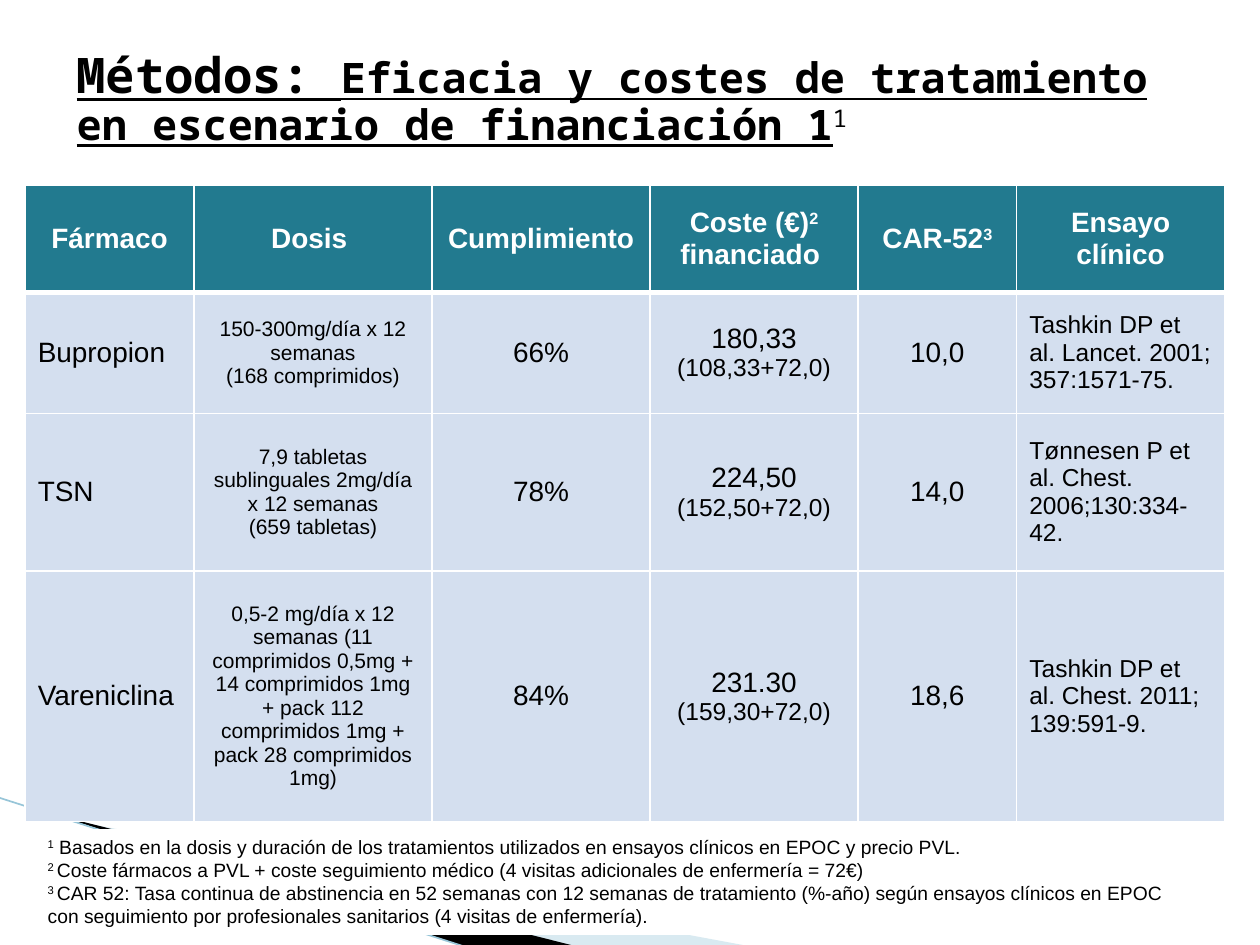
from lxml import etree
from pptx import Presentation
from pptx.dml.color import RGBColor
from pptx.enum.shapes import MSO_CONNECTOR, MSO_SHAPE
from pptx.enum.text import MSO_ANCHOR, PP_ALIGN
from pptx.oxml import parse_xml
from pptx.oxml.ns import nsdecls, qn
from pptx.util import Inches, Pt

BLACK, WHITE, TEAL, PALE = "000000", "FFFFFF", "227A8F", "D4DFEF"
COLUMN_WIDTHS = [1.34, 1.89, 1.73, 1.65, 1.26, 1.65]
ROW_HEIGHTS = [0.85, 0.96, 1.25, 1.99]
LEFT_COLUMNS, TIGHT_COLUMNS = (0, 5), (2, 3)
BODY_SIZES = [16, 12, 16, 16, 16, 14]

# Text between carets is superscript.
HEADERS = ["Fármaco", "Dosis ", "Cumplimiento ", "Coste (€)^2^ financiado ",
           "CAR-52^3^", "Ensayo clínico"]
# Each cost is a total and its breakdown.
TREATMENTS = [
    ["Bupropion", "150-300mg/día x 12 semanas\n(168 comprimidos)", "66%",
     ("180,33 ", "(108,33+72,0)"), "10,0",
     "Tashkin DP et al. Lancet. 2001; 357:1571-75."],
    ["TSN", "7,9 tabletas sublinguales 2mg/día x 12 semanas\n(659 tabletas)", "78%",
     ("224,50 ", "(152,50+72,0)"), "14,0",
     "Tønnesen P et al. Chest. 2006;130:334-42."],
    ["Vareniclina", "0,5-2 mg/día x 12 semanas (11 comprimidos 0,5mg + 14 comprimidos 1mg "
     "+ pack 112 comprimidos 1mg + pack 28 comprimidos 1mg)", "84%",
     ("231.30 ", "(159,30+72,0)"), "18,6",
     "Tashkin DP et al. Chest. 2011; 139:591-9."],
]
FOOTNOTES = (
    "^1^ Basados en la dosis y duración de los tratamientos utilizados en ensayos clínicos "
    "en EPOC y precio PVL.\n"
    "^2 ^Coste fármacos a PVL + coste seguimiento médico (4 visitas adicionales de "
    "enfermería = 72€)\n"
    "^3 ^CAR 52: Tasa continua de abstinencia en 52 semanas con 12 semanas de tratamiento "
    "(%-año) según ensayos clínicos en EPOC con seguimiento por profesionales sanitarios "
    "(4 visitas de enfermería).")


def rgb(color):
    return RGBColor.from_string(color)


def paint(fill, color):
    fill.solid()
    fill.fore_color.rgb = rgb(color)


def set_font(font, size, color=BLACK, bold=False, name="Arial"):
    font.size, font.bold, font.name = Pt(size), bold, name
    font.color.rgb = rgb(color)


def add_run(paragraph, text, superscript=False):
    run = paragraph.add_run()
    run.text = text
    if superscript:
        run.font._element.set("baseline", "30000")
    return run


def write(frame, text, size, color=BLACK, bold=False, align=PP_ALIGN.LEFT):
    """Fill a frame, one paragraph a line, with careted parts raised."""
    for number, line in enumerate(text.split("\n")):
        paragraph = frame.add_paragraph() if number else frame.paragraphs[0]
        paragraph.alignment = align
        set_font(paragraph.font, size, color, bold)
        for part, piece in enumerate(line.split("^")):
            if piece:
                add_run(paragraph, piece, superscript=part % 2 == 1)


def set_borders(cell, top, bottom):
    properties = cell._tc.get_or_add_tcPr()
    for place, (side, width) in enumerate(
            [("L", 1), ("R", 1), ("T", top), ("B", bottom)]):
        properties.insert(place, parse_xml(
            f'<a:ln{side} {nsdecls("a")} w="{Pt(width)}"><a:solidFill>'
            f'<a:srgbClr val="{WHITE}"/></a:solidFill></a:ln{side}>'))


def add_wedge(slide, points, color, opacity=None):
    corners = [(Inches(x), Inches(y)) for x, y in points]
    builder = slide.shapes.build_freeform(*corners[0], scale=1.0)
    builder.add_line_segments(corners[1:], close=True)
    wedge = builder.convert_to_shape()
    wedge.shadow.inherit = False
    wedge.line.fill.background()
    paint(wedge.fill, color)
    if opacity is not None:
        tint = wedge._element.spPr.find(".//" + qn("a:srgbClr"))
        etree.SubElement(tint, qn("a:alpha")).set("val", str(opacity * 1000))


def add_rule(slide, start, end, color, width):
    rule = slide.shapes.add_connector(
        MSO_CONNECTOR.STRAIGHT, *(Inches(value) for value in start + end))
    rule.line.color.rgb = rgb(color)
    rule.line.width = Pt(width)
    etree.SubElement(rule._element.spPr, qn("a:effectLst"))


def add_corner_decoration(slide):
    add_wedge(slide, [(0.55, 6.51), (5.95, 7.51), (4.56, 7.51), (0.55, 6.5)], "A0CBDC", 40)
    add_wedge(slide, [(0.53, 6.49), (4.57, 7.51), (3.72, 7.52), (0.54, 6.5)], BLACK)
    add_rule(slide, (-0.01, 6.33), (3.71, 7.52), "97C5D8", 0.95)


def add_title(slide):
    frame = slide.shapes.add_textbox(
        Inches(0.51), Inches(0.36), Inches(9), Inches(0.87)).text_frame
    frame.word_wrap = True
    frame.vertical_anchor = MSO_ANCHOR.MIDDLE
    title = frame.paragraphs[0]
    title.line_spacing = 0.9
    set_font(title.font, 24, bold=True, name="Noto Sans Mono")
    section = add_run(title, "Métodos: ")
    section.font.size = Pt(28)
    subject = add_run(
        title, "Eficacia y costes de tratamiento en escenario de financiación 1")
    section.font.underline = subject.font.underline = True
    add_run(title, "1", superscript=True).font.bold = False


def fill_cell(cell, row, column, content):
    header = row == 0
    cell.vertical_anchor = MSO_ANCHOR.MIDDLE
    paint(cell.fill, TEAL if header else PALE)
    set_borders(cell, top=3 if row == 1 else 1, bottom=3 if header else 1)
    if header:
        write(cell.text_frame, content, 16, WHITE, True, PP_ALIGN.CENTER)
        return
    if column in TIGHT_COLUMNS:
        cell.margin_left = cell.margin_right = cell.margin_top = cell.margin_bottom = 0
    align = PP_ALIGN.LEFT if column in LEFT_COLUMNS else PP_ALIGN.CENTER
    text, *breakdown = content if isinstance(content, tuple) else (content,)
    write(cell.text_frame, text, BODY_SIZES[column], align=align)
    for detail in breakdown:
        add_run(cell.text_frame.paragraphs[0], detail).font.size = Pt(14)


def add_treatment_table(slide):
    table = slide.shapes.add_table(
        len(ROW_HEIGHTS), len(COLUMN_WIDTHS), Inches(0.2), Inches(1.47),
        Inches(sum(COLUMN_WIDTHS)), Inches(sum(ROW_HEIGHTS))).table
    table.horz_banding = False
    for column, width in zip(table.columns, COLUMN_WIDTHS):
        column.width = Inches(width)
    for row, height in zip(table.rows, ROW_HEIGHTS):
        row.height = Inches(height)
    for row, contents in enumerate([HEADERS] + TREATMENTS):
        for column, content in enumerate(contents):
            fill_cell(table.cell(row, column), row, column, content)


def add_footnotes(slide):
    panel = slide.shapes.add_shape(
        MSO_SHAPE.RECTANGLE, Inches(0.28), Inches(6.58), Inches(9.29), Inches(0.84))
    panel.shadow.inherit = False
    paint(panel.fill, WHITE)
    panel.line.fill.background()
    panel.text_frame.word_wrap = True
    panel.text_frame.vertical_anchor = MSO_ANCHOR.TOP
    write(panel.text_frame, FOOTNOTES, 11)


def main():
    presentation = Presentation()
    presentation.slide_width, presentation.slide_height = Inches(10), Inches(7.5)
    slide = presentation.slides.add_slide(presentation.slide_layouts[6])
    add_corner_decoration(slide)
    add_treatment_table(slide)
    add_title(slide)
    add_footnotes(slide)
    presentation.save("out.pptx")


if __name__ == "__main__":
    main()
